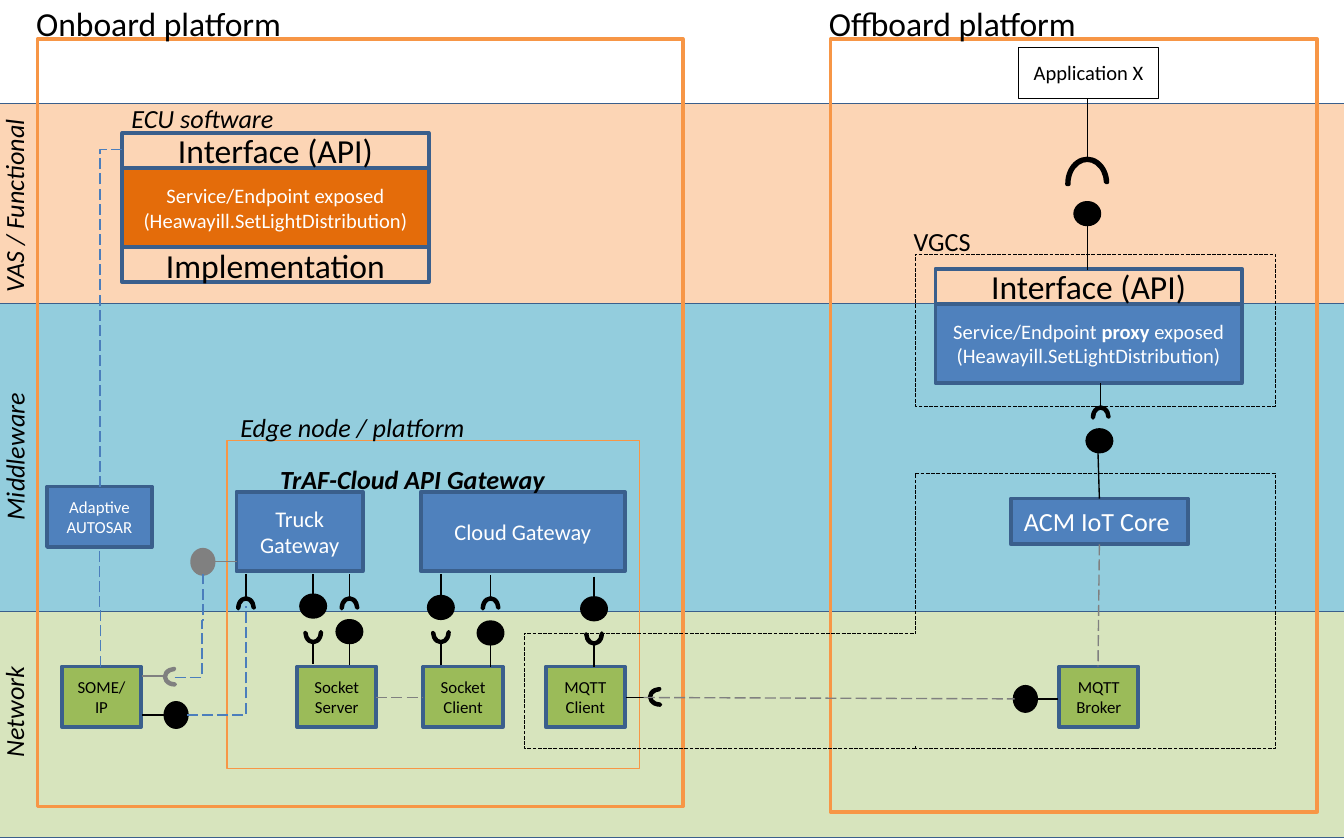
from lxml.etree import SubElement
from pptx import Presentation
from pptx.dml.color import RGBColor
from pptx.enum.dml import MSO_LINE
from pptx.enum.shapes import MSO_CONNECTOR, MSO_SHAPE
from pptx.enum.text import MSO_ANCHOR, PP_ALIGN
from pptx.oxml.ns import qn
from pptx.util import Inches, Pt

RECT, FLOW = MSO_SHAPE.RECTANGLE, MSO_SHAPE.FLOWCHART_PROCESS
BALL, CUP = MSO_SHAPE.OVAL, MSO_SHAPE.BLOCK_ARC
STRAIGHT, ELBOW = MSO_CONNECTOR.STRAIGHT, MSO_CONNECTOR.ELBOW
DASH, MIDDLE = MSO_LINE.LONG_DASH, MSO_ANCHOR.MIDDLE
LEFT, CENTER = PP_ALIGN.LEFT, PP_ALIGN.CENTER

COLORS = {
    "black": "000000", "white": "FFFFFF", "gray": "808080",
    "peach": "FCD5B5", "sky": "93CDDD", "lime": "D7E4BD",
    "orange": "F79646", "rust": "E46C0A", "blue": "4F81BD",
    "navy": "3A5F8C", "link": "4B7EBC", "green": "9BBB59",
}
RGB = {name: RGBColor.from_string(code) for name, code in COLORS.items()}

# Grid of 100 columns by 62.5 rows; every length below counts its cells
CELL = Inches(0.1)
deck = Presentation()
deck.slide_width, deck.slide_height = 100 * CELL, int(62.5 * CELL)
slide = deck.slides.add_slide(deck.slide_layouts[6])
shapes = slide.shapes


def box(kind, place, fill, edge, width=2, dash=None, turn=0):
    shape = shapes.add_shape(kind, *(int(n * CELL) for n in place))
    shape.shadow.inherit = False
    shape.rotation = turn
    if fill:
        shape.fill.solid()
        shape.fill.fore_color.rgb = RGB[fill]
    else:
        shape.fill.background()
    shape.line.color.rgb = RGB[edge]
    shape.line.width = Pt(width)
    shape.line.dash_style = dash
    return shape


def write(shape, text, size, color="black", bold=False, italic=False,
          align=CENTER, wrap=True):
    """Fill a shape with lines of text; parts between stars are bold."""
    frame = shape.text_frame
    frame.word_wrap = wrap
    for row, words in enumerate(text.split("\n")):
        para = frame.add_paragraph() if row else frame.paragraphs[0]
        para.alignment = align
        for part, piece in enumerate(words.split("*")):
            run = para.add_run()
            run.text = piece
            font = run.font
            font.name, font.size, font.italic = "Calibri", Pt(size), italic
            font.bold = bold or part % 2 == 1
            font.color.rgb = RGB[color]


# Layer bands, bottom to top
for top, height, fill in [(45.4, 16.9, "lime"), (22.1, 23.4, "sky"),
                          (7.7, 14.9, "peach")]:
    box(RECT, (-0.5, top, 100.5, height), fill, "navy", 0.25)

# Platform and edge node frames
for place, width in [((2.8, 2.9, 48, 57.1), 2), ((61.8, 2.9, 36.2, 57.5), 2),
                     ((16.9, 32.8, 30.7, 24.4), 0.75)]:
    box(FLOW, place, None, "orange", width)

# Dashed cloud frames, with a patch that joins the lower two
for place in [(68.1, 18.9, 26.8, 11.3), (68.1, 35.2, 26.8, 20.5),
              (39, 47.1, 29.1, 8.6)]:
    box(RECT, place, None, "black", 0.25, DASH)
box(RECT, (68, 47.3, 0.5, 8.1), "lime", "lime")

# Service stacks and component boxes
CALL = "(Heawayill.SetLightDistribution)"
tiles = [
    (FLOW, (9.1, 12.5, 22.8, 5.9), "rust",
     "Service/Endpoint exposed\n" + CALL, 11, "white"),
    (FLOW, (9.1, 9.9, 22.8, 2.6), "peach", "Interface (API)", 18, "black"),
    (FLOW, (9.1, 18.4, 22.8, 2.6), "peach", "Implementation", 18, "black"),
    (FLOW, (69.6, 22.6, 22.8, 5.9), "blue",
     "Service/Endpoint *proxy* exposed\n" + CALL, 11, "white"),
    (FLOW, (69.6, 20, 22.8, 2.6), "peach", "Interface (API)", 18, "black"),
    (RECT, (17.6, 36.6, 9.4, 5.9), "blue", "Truck Gateway", 12, "white"),
    (RECT, (31.3, 36.6, 15.2, 5.9), "blue", "Cloud Gateway", 12, "white"),
    (RECT, (3.5, 36.2, 7.8, 4.5), "blue", "Adaptive AUTOSAR", 9, "white"),
]
for left, text in [(4.6, "SOME/IP"), (22.1, "Socket Server"),
                   (31.5, "Socket Client"), (40.6, "MQTT Client"),
                   (78.8, "MQTT Broker")]:
    tiles.append((RECT, (left, 49.6, 5.9, 4.5), "green", text, 9, "black"))
for kind, place, fill, text, size, color in tiles:
    tile = box(kind, place, fill, "navy")
    tile.text_frame.vertical_anchor = MIDDLE
    write(tile, text, size, color)
app = box(RECT, (75.8, 3.5, 10.4, 3.8), "white", "black", 0.25)
write(app, "Application X", 11)
core = box(RECT, (75.2, 37.1, 13.2, 3.4), "blue", "navy")
write(core, "ACM IoT Core", 14, "white", align=LEFT, wrap=False)

# Labels
plain, slant = {"size": 14}, {"size": 14, "italic": True}
for place, turn, text, style in [
    ((1.7, -0.3, 20.5, 4), 0, "Onboard platform", {"size": 18}),
    ((60.7, -0.3, 20.7, 4), 0, "Offboard platform", {"size": 18}),
    ((16.9, 30.1, 18.9, 3.4), 0, "Edge node / platform", slant),
    ((67, 16.3, 6.3, 3.4), 0, "VGCS", plain),
    ((8.8, 7.1, 12.7, 3.4), 0, "ECU software", slant),
    ((18.5, 34, 24.4, 3.4), 0, "TrAF-Cloud API Gateway",
     {**slant, "bold": True, "align": CENTER, "wrap": True}),
    ((-3.4, 51.2, 8.9, 3.4), 270, "Network", slant),
    ((-4.7, 32.2, 11.6, 3.4), 270, "Middleware", slant),
    ((-6.5, 13.5, 15.1, 3.4), 270, "VAS / Functional", slant),
]:
    label = shapes.add_textbox(*(int(n * CELL) for n in place))
    label.rotation = turn
    write(label, text, **{"align": LEFT, "wrap": False, **style})

# Ports by centre: balls provide, cups require
ports = [(BALL, x, y, 1.8, 1.6, turn, "black") for x, y, turn in [
    (80.9, 15.9, 0), (81.8, 32.8, 0), (76.3, 52, 270), (44.2, 45.3, 0),
    (36.5, 47.1, 0), (26, 47, 0), (13.1, 53.2, 90), (32.8, 45.2, 0),
    (23.3, 45.1, 0)]]
ports += [(CUP, x, y, 1.2, 1.5, turn, "black") for x, y, turn in [
    (81.9, 31.05, 0), (49.1, 51.85, 270), (44.2, 47.15, 180),
    (36.5, 45.25, 0), (26, 45.25, 0), (18.3, 45.25, 0),
    (32.8, 47.05, 180), (23.3, 47.05, 180)]]
ports += [(CUP, 80.9, 13.65, 3, 3.7, 0, "black"),
          (BALL, 15.1, 41.8, 1.8, 1.6, 270, "gray"),
          (CUP, 13, 50.35, 1.2, 1.5, 270, "gray")]
for kind, x, y, wide, high, turn, color in ports:
    port = box(kind, (x - wide / 2, y - high / 2, wide, high),
               color, color, turn=turn)
    if kind == CUP:
        for spot, value in enumerate((106.35, 214.07, 0.04)):
            port.adjustments[spot] = value

# Straight stems and dashed links: ends, colour, dash
lines = [(ends, "black", None) for ends in [
    (80.9, 20.1, 80.9, 16.7), (80.9, 7.4, 80.9, 11.8),
    (81.8, 37.1, 81.7, 33.7), (81.9, 28.5, 81.9, 30.3),
    (78.7, 52, 77.1, 52), (46.6, 51.9, 48.4, 51.9),
    (44.2, 49.6, 44.2, 47.9), (44.2, 42.9, 44.2, 44.5),
    (36.5, 42.8, 36.5, 44.5), (36.5, 49.6, 36.5, 47.9),
    (26, 42.7, 26, 44.5), (26, 49.5, 26, 47.9),
    (10.6, 53.2, 12.3, 53.2), (18.3, 42.7, 18.3, 44.5),
    (32.8, 49.5, 32.8, 47.8), (32.8, 42.7, 32.8, 44.4),
    (23.3, 49.4, 23.3, 47.7), (23.3, 42.7, 23.3, 44.3)]]
lines += [(ends, "gray", None) for ends in [
    (10.6, 50.3, 12.3, 50.3), (17.6, 41.8, 15.9, 41.8)]]
lines += [(ends, "gray", DASH) for ends in [
    (47.9, 51.9, 75.5, 52), (81.8, 40.5, 81.7, 49.6),
    (28, 51.9, 31.5, 51.9)]]
wires = [(shapes.add_connector(STRAIGHT, *(int(n * CELL) for n in ends)),
          color, dash) for ends, color, dash in lines]

# Bent links: place before turning, preset, turn, flips, bend shares
for (x, y, wide, high), preset, turn, flips, bends in [
    ((3, 45.1, 8.9, 0.1), "bentConnector3", 270, "V", ()),
    ((-4.3, 22.9, 25.1, 1.6), "bentConnector2", 90, "HV", ()),
    ((13.9, 45.1, 4.4, 8.1), "bentConnector2", 0, "V", ()),
    ((13, 42.7, 2.1, 7.7), "bentConnector4", 0, "V", (97500, 55200)),
]:
    ends = (x, y, x + wide, y + high)
    wire = shapes.add_connector(ELBOW, *(int(n * CELL) for n in ends))
    props = wire._element.spPr
    frame, shape = props.find(qn("a:xfrm")), props.find(qn("a:prstGeom"))
    frame.set("rot", str(turn * 60000))
    for flip in flips:
        frame.set("flip" + flip, "1")
    shape.set("prst", preset)
    for spot, share in enumerate(bends, 1):
        SubElement(shape.find(qn("a:avLst")), qn("a:gd"),
                   name=f"adj{spot}", fmla=f"val {share}")
    wires.append((wire, "link", DASH))

for wire, color, dash in wires:
    wire.line.color.rgb = RGB[color]
    wire.line.width = Pt(0.75)
    wire.line.dash_style = dash
    SubElement(wire._element.spPr, qn("a:effectLst"))

deck.save("out.pptx")
